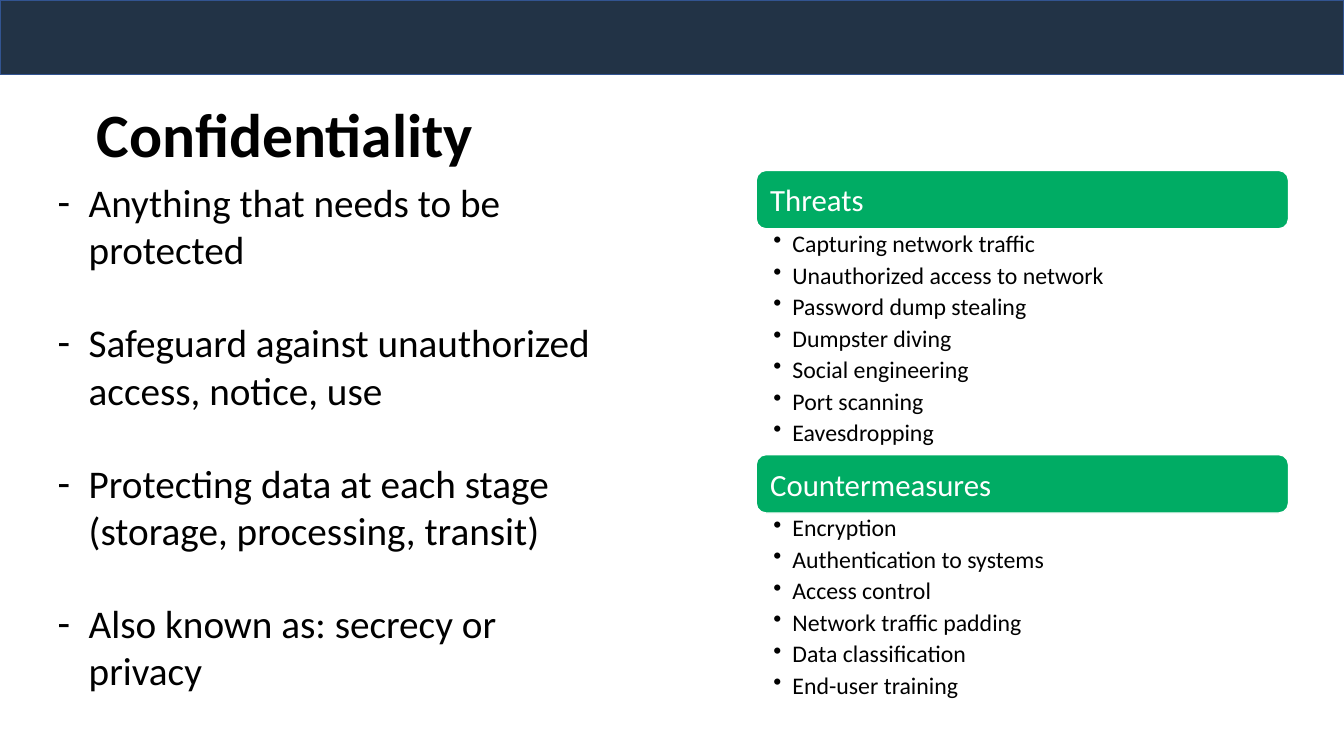
import pptx
import pptx.util
import pptx.dml.color
import pptx.enum.shapes
import pptx.enum.text
from lxml import etree

Inches = pptx.util.Inches
Pt = pptx.util.Pt
RGBColor = pptx.dml.color.RGBColor
Shape = pptx.enum.shapes.MSO_SHAPE
Anchor = pptx.enum.text.MSO_ANCHOR
Align = pptx.enum.text.PP_ALIGN

NAVY = RGBColor(0x22, 0x33, 0x46)
BLUE = RGBColor(0x32, 0x54, 0x91)
GREEN = RGBColor(0x00, 0xAC, 0x64)
WHITE = RGBColor(0xFF, 0xFF, 0xFF)
BLACK = RGBColor(0, 0, 0)

TITLE = "Confidentiality"
POINTS = [
    "Anything that needs to be protected",
    "Safeguard against unauthorized access, notice, use",
    "Protecting data at each stage (storage, processing, transit)",
    "Also known as: secrecy or privacy",
]
PANELS = [
    ("Threats", [
        "Capturing network traffic",
        "Unauthorized access to network",
        "Password dump stealing",
        "Dumpster diving",
        "Social engineering",
        "Port scanning",
        "Eavesdropping",
    ]),
    ("Countermeasures", [
        "Encryption",
        "Authentication to systems",
        "Access control",
        "Network traffic padding",
        "Data classification",
        "End-user training",
    ]),
]
PANEL_X, PANEL_W = 7.5, 5.28
PANEL_TOP, PANEL_STEP, HEAD_H = 1.69, 2.82, 0.58


def place(shape, x, y, w, h):
    """Move a shape to a box given in inches."""
    shape.left, shape.top = Inches(x), Inches(y)
    shape.width, shape.height = Inches(w), Inches(h)


def setup(frame, anchor, left=0):
    """Prepare a text frame with wrapping and flush margins."""
    frame.word_wrap = True
    frame.auto_size = pptx.enum.text.MSO_AUTO_SIZE.NONE
    frame.vertical_anchor = anchor
    frame.margin_left = Inches(left)
    frame.margin_top = frame.margin_right = frame.margin_bottom = 0


def style(par, size, color, bold=False):
    """Format the runs of a paragraph."""
    par.alignment = Align.LEFT
    for run in par.runs:
        run.font.name = "Calibri"
        run.font.size = Pt(size)
        run.font.bold = bold
        run.font.color.rgb = color


def fill_list(frame, items, mark, indent, hang, size, gap):
    """Write a bulleted list into a text frame."""
    setup(frame, Anchor.TOP)
    frame.text = "\n".join(items)
    for i, par in enumerate(frame.paragraphs):
        props = par._p.get_or_add_pPr()
        props.set("marL", str(Inches(indent)))
        props.set("indent", str(-Inches(hang)))
        par.space_before = Pt(gap if i else 0)
        bullet = etree.SubElement(props, pptx.oxml.ns.qn("a:buChar"))
        bullet.set("char", mark)
        style(par, size, BLACK)


def add_box(slide, kind, box, fill, line, width):
    """Add a filled and outlined preset shape."""
    shape = slide.shapes.add_shape(kind, *map(Inches, box))
    shape.shadow.inherit = False
    shape.fill.solid()
    shape.fill.fore_color.rgb = fill
    shape.line.color.rgb = line
    shape.line.width = Pt(width)
    return shape


def add_panel(slide, top, name, items):
    """Add a green heading with its list below."""
    head = add_box(slide, Shape.ROUNDED_RECTANGLE,
                   (PANEL_X, top, PANEL_W, HEAD_H), GREEN, WHITE, 0.96)
    head.adjustments[0] = 0.17
    setup(head.text_frame, Anchor.MIDDLE, 0.11)
    head.text_frame.text = name
    style(head.text_frame.paragraphs[0], 22, WHITE)
    box = slide.shapes.add_textbox(0, 0, 0, 0)
    place(box, PANEL_X + 0.11, top + HEAD_H, PANEL_W - 0.11,
          PANEL_STEP - HEAD_H)
    fill_list(box.text_frame, items, "•", 0.25, 0.19, 17, 2.1)


def main():
    """Build the slide and save it."""
    deck = pptx.Presentation()
    deck.slide_width, deck.slide_height = Inches(13.33), Inches(7.5)
    slide = deck.slides.add_slide(deck.slide_layouts[1])
    add_box(slide, Shape.RECTANGLE, (0, 0, 13.33, 0.74), NAVY, BLUE, 1)

    title = slide.shapes.title
    place(title, 0.96, 0.64, 12, 1.45)
    setup(title.text_frame, Anchor.MIDDLE)
    title.text_frame.text = TITLE
    par = title.text_frame.paragraphs[0]
    par.line_spacing = 0.9
    style(par, 44, BLACK, True)

    body = slide.placeholders[1]
    place(body, 0.55, 1.77, 5.4, 5.21)
    fill_list(body.text_frame, POINTS, "-", 0.33, 0.31, 28, 33)

    for i, (name, items) in enumerate(PANELS):
        add_panel(slide, PANEL_TOP + i * PANEL_STEP, name, items)
    deck.save("out.pptx")


if __name__ == "__main__":
    main()
